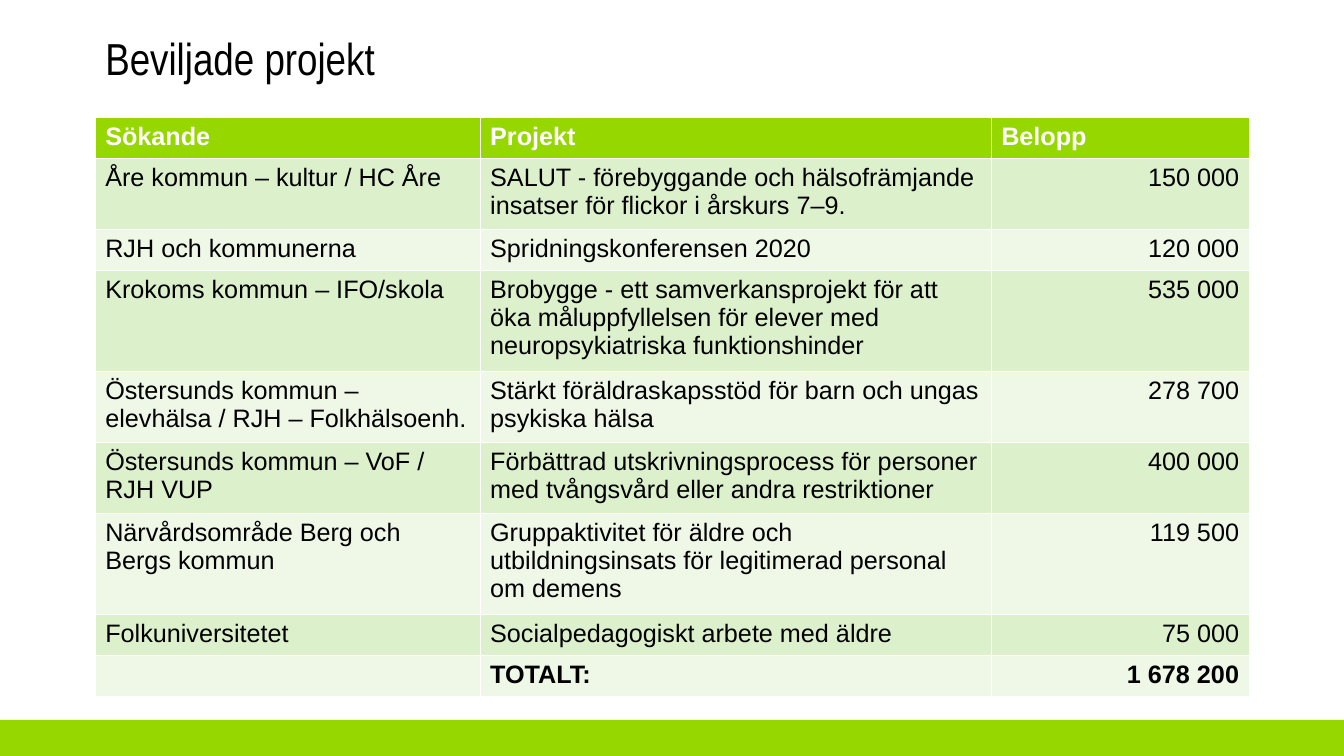
from pptx import Presentation
from pptx.dml.color import RGBColor
from pptx.enum import shapes, text
from pptx.util import Cm, Pt

COLORS = {
    "green": "97D700",
    "band_dark": "DDF0CC",
    "band_light": "EFF8E7",
    "white": "FFFFFF",
    "black": "000000",
}
HEADER = ("Sökande", "Projekt", "Belopp")
# Applicant, project, amount, number of text lines
PROJECTS = [
    ("Åre kommun – kultur / HC Åre",
     "SALUT - förebyggande och hälsofrämjande insatser för flickor i årskurs 7–9.",
     "150 000", 2),
    ("RJH och kommunerna", "Spridningskonferensen 2020", "120 000", 1),
    ("Krokoms kommun – IFO/skola",
     "Brobygge - ett samverkansprojekt för att öka måluppfyllelsen för elever med "
     "neuropsykiatriska funktionshinder",
     "535 000", 3),
    ("Östersunds kommun – elevhälsa / RJH – Folkhälsoenh.",
     "Stärkt föräldraskapsstöd för barn och ungas psykiska hälsa",
     "278 700", 2),
    ("Östersunds kommun – VoF / RJH VUP",
     "Förbättrad utskrivningsprocess för personer med tvångsvård eller andra restriktioner",
     "400 000", 2),
    ("Närvårdsområde Berg och Bergs kommun",
     "Gruppaktivitet för äldre och utbildningsinsats för legitimerad personal om demens",
     "119 500", 3),
    ("Folkuniversitetet", "Socialpedagogiskt arbete med äldre", "75 000", 1),
    ("", "TOTALT:", "1 678 200", 1),
]
COLUMN_WIDTHS = (9.7, 12.88, 6.5)
CELL_PADDING, LINE_HEIGHT = 0.27, 0.76


def rgb(name):
    return RGBColor.from_string(COLORS[name])


def format_font(font, color, **values):
    font.color.rgb = rgb(color)
    for name, value in values.items():
        setattr(font, name, value)


def add_footer_band(s, prs):
    top = Cm(18.14)
    band = s.shapes.add_shape(shapes.MSO_SHAPE.RECTANGLE, 0, top,
                              prs.slide_width, prs.slide_height - top)
    band.shadow.inherit = False
    band.fill.solid()
    band.fill.fore_color.rgb = rgb("green")
    band.line.fill.background()


def set_title(s, wording):
    title = s.shapes.title
    place = {"left": Cm(2.4), "top": Cm(0.8), "width": Cm(29.06), "height": Cm(1.8)}
    for name, value in place.items():
        setattr(title, name, value)
    tf = title.text_frame
    tf.vertical_anchor = text.MSO_ANCHOR.TOP
    tf.auto_size = text.MSO_AUTO_SIZE.NONE
    p = tf.paragraphs[0]
    p.alignment = text.PP_ALIGN.LEFT
    p.line_spacing = 0.9
    r = p.add_run()
    r.text = wording
    format_font(r.font, "black", name="Arial Narrow", size=Pt(32))


def fill_cell(cell, wording, fill, color, bold, align):
    cell.fill.solid()
    cell.fill.fore_color.rgb = rgb(fill)
    p = cell.text_frame.paragraphs[0]
    p.alignment = align
    format_font(p.font, color, size=Pt(18))
    if wording:
        r = p.add_run()
        r.text = wording
        format_font(r.font, color, name="Arial", size=Pt(18), bold=bold)


def add_project_table(s):
    rows = [(*HEADER, 1), *PROJECTS]
    heights = [CELL_PADDING + LINE_HEIGHT * lines for *_, lines in rows]
    table = s.shapes.add_table(len(rows), len(HEADER), Cm(2.4), Cm(2.96),
                               Cm(sum(COLUMN_WIDTHS)), Cm(sum(heights))).table
    for column, width in zip(table.columns, COLUMN_WIDTHS):
        column.width = Cm(width)
    for i, (*wordings, _) in enumerate(rows):
        table.rows[i].height = Cm(heights[i])
        is_header = i == 0
        band = "band_dark" if i % 2 else "band_light"
        for j, wording in enumerate(wordings):
            is_amount = j == 2 and not is_header
            fill_cell(table.cell(i, j), wording,
                      fill="green" if is_header else band,
                      color="white" if is_header else "black",
                      bold=is_header or i == len(rows) - 1,
                      align=text.PP_ALIGN.RIGHT if is_amount else text.PP_ALIGN.LEFT)


def main():
    prs = Presentation()
    prs.slide_width, prs.slide_height = Cm(33.87), Cm(19.05)
    s = prs.slides.add_slide(prs.slide_layouts[5])
    add_footer_band(s, prs)
    set_title(s, "Beviljade projekt")
    add_project_table(s)
    prs.save("out.pptx")


if __name__ == "__main__":
    main()
